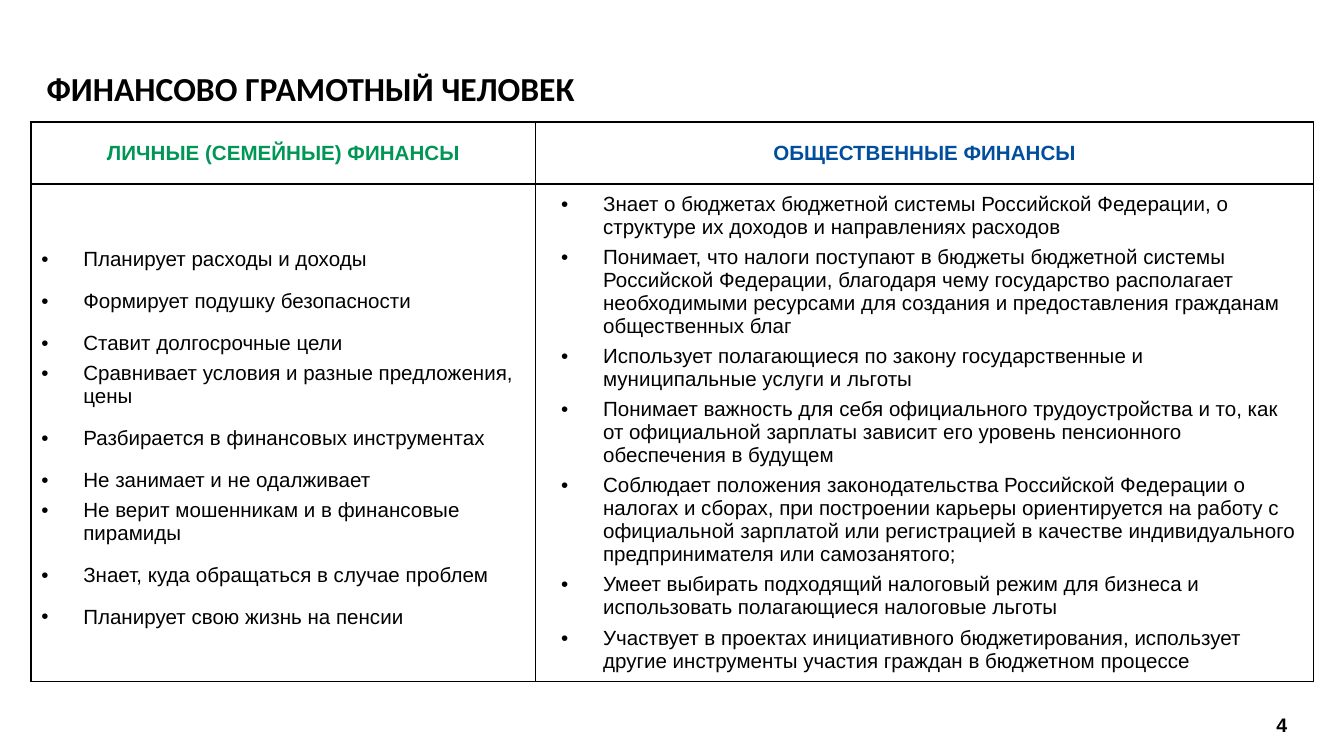
import dataclasses

import lxml.etree
import pptx
import pptx.dml.color
import pptx.enum.text
import pptx.oxml.ns
import pptx.util

Pt = pptx.util.Pt
Align = pptx.enum.text.PP_ALIGN
Anchor = pptx.enum.text.MSO_ANCHOR
qn = pptx.oxml.ns.qn


@dataclasses.dataclass(frozen=True)
class Theme:
    black: str = "000000"
    green: str = "009655"
    blue: str = "004E9E"
    title_font: str = "Calibri"
    body_font: str = "Arial"
    title_size: float = 18
    body_size: float = 11
    number_size: float = 10.5
    thick: float = 1
    thin: float = 0.5


THEME = Theme()

PERSONAL = [
    ("Планирует расходы и доходы", 1.5),
    ("Формирует подушку безопасности", 1.5),
    ("Ставит долгосрочные цели", 1.5),
    ("Сравнивает условия и разные предложения, цены", 1),
    ("Разбирается в финансовых инструментах", 1.5),
    ("Не занимает и не одалживает", 1.5),
    ("Не верит мошенникам и в финансовые пирамиды", 1),
    ("Знает, куда обращаться в случае проблем", 1.5),
    ("Планирует свою жизнь на пенсии", 1.5),
]

PUBLIC = [
    ("Знает о бюджетах бюджетной системы Российской Федерации, о структуре их "
     "доходов и направлениях расходов", 1),
    ("Понимает, что налоги поступают в бюджеты бюджетной системы Российской "
     "Федерации, благодаря чему государство располагает необходимыми ресурсами "
     "для создания и предоставления гражданам общественных благ", 1),
    ("Использует полагающиеся по закону государственные и муниципальные услуги "
     "и льготы", 1),
    ("Понимает важность для себя официального трудоустройства и то, как от "
     "официальной зарплаты зависит его уровень пенсионного обеспечения в "
     "будущем", 1),
    ("Соблюдает положения законодательства Российской Федерации о налогах и "
     "сборах, при построении карьеры ориентируется на работу с официальной "
     "зарплатой или регистрацией в качестве индивидуального предпринимателя "
     "или самозанятого;", 1),
    ("Умеет выбирать подходящий налоговый режим для бизнеса и использовать "
     "полагающиеся налоговые льготы", 1),
    ("Участвует в проектах инициативного бюджетирования, использует другие "
     "инструменты участия граждан в бюджетном процессе", 1),
]


def add_span(para, text, size, color=THEME.black, bold=False, font=THEME.body_font):
    span = para.add_run()
    span.text = text
    span.font.name = font
    span.font.size = Pt(size)
    span.font.bold = bold
    span.font.color.rgb = pptx.dml.color.RGBColor.from_string(color)


def set_insets(frame, across, down):
    frame.margin_left = frame.margin_right = Pt(across)
    frame.margin_top = frame.margin_bottom = Pt(down)
    frame.vertical_anchor = Anchor.MIDDLE
    frame.word_wrap = True


def add_title(page, text):
    title = page.shapes.title
    title.left, title.top, title.width, title.height = Pt(20), Pt(20), Pt(542), Pt(54)
    set_insets(title.text_frame, 5, 3)
    para = title.text_frame.paragraphs[0]
    para.alignment = Align.LEFT
    add_span(para, text, THEME.title_size, bold=True, font=THEME.title_font)


def set_borders(cell, widths):
    properties = cell._tc.get_or_add_tcPr()
    for index, (side, width) in enumerate(widths.items()):
        line = lxml.etree.Element(qn(f"a:ln{side}"), w=str(Pt(width)))
        fill = lxml.etree.SubElement(line, qn("a:solidFill"))
        lxml.etree.SubElement(fill, qn("a:srgbClr"), val=THEME.black)
        properties.insert(index, line)


def add_bullet(para, indent):
    properties = para._p.get_or_add_pPr()
    properties.set("marL", str(Pt(indent)))
    properties.set("indent", str(Pt(-22.5)))
    color = lxml.etree.SubElement(properties, qn("a:buClr"))
    lxml.etree.SubElement(color, qn("a:srgbClr"), val=THEME.black)
    lxml.etree.SubElement(properties, qn("a:buFont"), typeface=THEME.body_font)
    lxml.etree.SubElement(properties, qn("a:buChar"), char="•")


def fill_heading(cell, text, color):
    para = cell.text_frame.paragraphs[0]
    para.alignment = Align.CENTER
    para.space_after = Pt(2)
    add_span(para, text, THEME.body_size, color, bold=True)


def fill_list(cell, items, indent):
    frame = cell.text_frame
    for index, (text, spacing) in enumerate(items):
        para = frame.add_paragraph() if index else frame.paragraphs[0]
        add_bullet(para, indent)
        para.line_spacing = spacing
        para.space_before = Pt(2 if index else 0)
        para.space_after = Pt(2)
        add_span(para, text, THEME.body_size)


def add_finance_table(page):
    widths, heights = (270.5, 416.5), (33, 266.5)
    table = page.shapes.add_table(
        2, 2, Pt(16.6), Pt(65.5), Pt(sum(widths)), Pt(sum(heights))).table
    table.first_row = table.horz_banding = False
    for column, width in zip(table.columns, widths):
        column.width = Pt(width)
    for row, height in zip(table.rows, heights):
        row.height = Pt(height)
    for row in range(2):
        for column in range(2):
            cell = table.cell(row, column)
            cell.fill.background()
            cell.vertical_anchor = Anchor.MIDDLE
            cell.margin_left = cell.margin_right = Pt(5.5)
            cell.margin_top = cell.margin_bottom = Pt(2.8)
            set_borders(cell, {
                "L": THEME.thin if column else THEME.thick,
                "R": THEME.thick if column else THEME.thin,
                "T": THEME.thick,
                "B": THEME.thin if row else THEME.thick,
            })
    fill_heading(table.cell(0, 0), "ЛИЧНЫЕ (СЕМЕЙНЫЕ) ФИНАНСЫ", THEME.green)
    fill_heading(table.cell(0, 1), "ОБЩЕСТВЕННЫЕ ФИНАНСЫ", THEME.blue)
    fill_list(table.cell(1, 0), PERSONAL, 22.5)
    fill_list(table.cell(1, 1), PUBLIC, 30.5)


def add_page_number(page, text):
    box = page.shapes.add_textbox(Pt(658), Pt(377.5), Pt(57.5), Pt(21.5))
    set_insets(box.text_frame, 4, 4)
    para = box.text_frame.paragraphs[0]
    para.alignment = Align.CENTER
    add_span(para, text, THEME.number_size, bold=True)


def main():
    deck = pptx.Presentation()
    deck.slide_width, deck.slide_height = Pt(720), Pt(405)
    page = deck.slides.add_slide(deck.slide_layouts[5])
    add_title(page, "ФИНАНСОВО ГРАМОТНЫЙ ЧЕЛОВЕК")
    add_finance_table(page)
    add_page_number(page, "4")
    deck.save("out.pptx")


if __name__ == "__main__":
    main()
